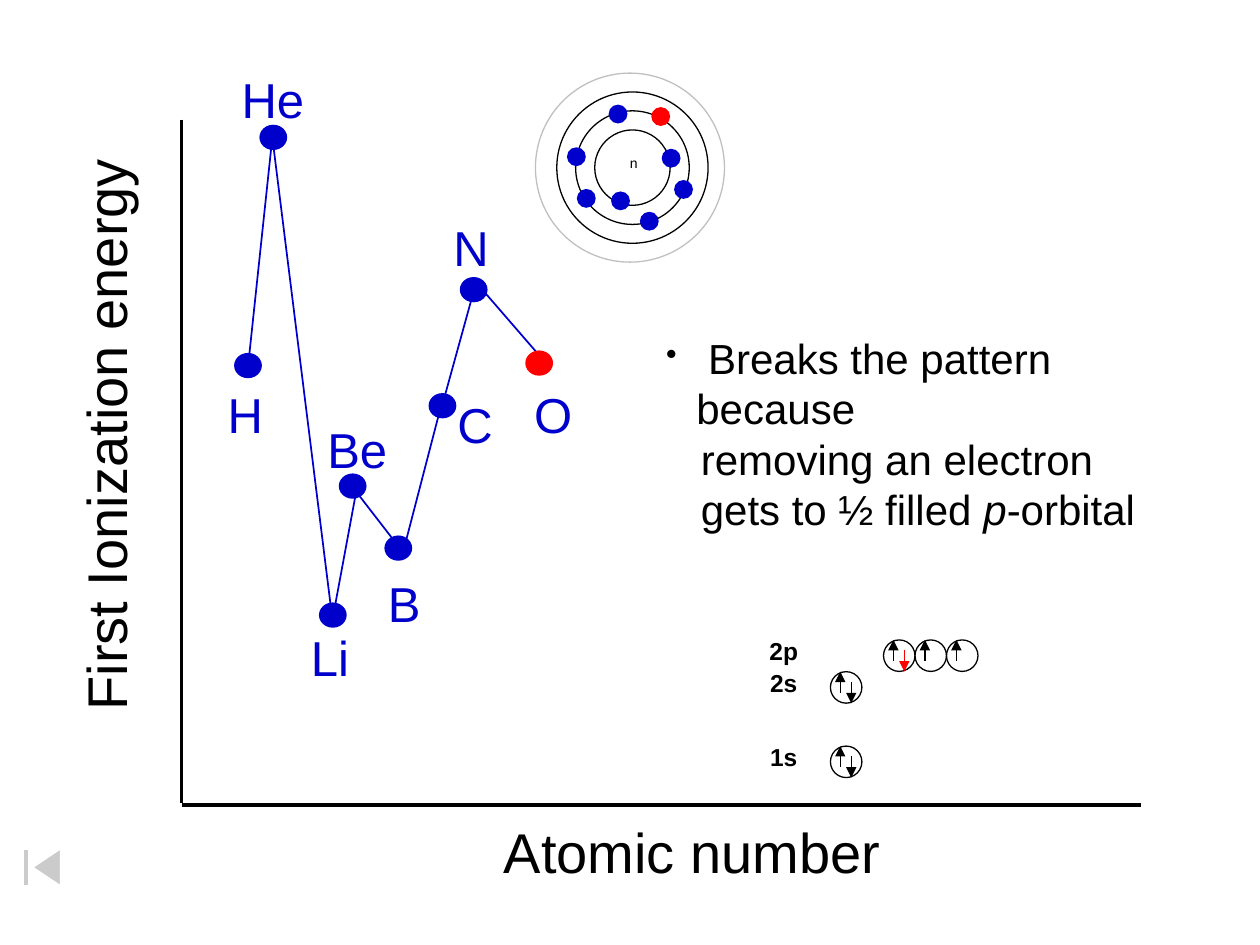
from lxml import etree
from pptx import Presentation
from pptx.dml.color import RGBColor
from pptx.enum import shapes, text
from pptx.oxml.ns import qn
from pptx.util import Cm, Pt

COLOURS = {"black": "000000", "blue": "0000CC", "red": "FF0000",
           "grey": "C0C0C0", "white": "FFFFFF"}

# All lengths are in centimetres.
AXES = [((3.66, 2.41), (3.66, 16.18)), ((23.01, 16.23), (3.66, 16.23))]
AXIS_TITLES = [("First Ionization energy", (-3.73, 7.92, 11.71, 1.6), 270),
               ("Atomic number", (9.91, 16.36, 8.2, 1.6), 0)]

# symbol, dot centre, label left, label top, label width, colour of dot
ELEMENTS = [
    ("H", (5.0, 7.37), (4.34, 7.62, 0.97), "blue"),
    ("He", (5.51, 2.77), (4.62, 1.27, 1.85), "blue"),
    ("Li", (6.71, 12.4), (6.02, 12.52, 1.85), "blue"),
    ("Be", (7.11, 9.8), (6.35, 8.33, 2.39), "blue"),
    ("B", (8.03, 11.05), (7.57, 11.43, 2.39), "blue"),
    ("C", (8.92, 8.18), (8.97, 7.82, 1.55), "blue"),
    ("N", (9.55, 5.84), (8.89, 4.27, 1.55), "blue"),
    ("O", (10.87, 7.32), (10.52, 7.62, 1.55), "red"),
]
TREND_LINES = [
    ((5.0, 7.39), (5.49, 2.77)), ((5.49, 2.77), (6.68, 12.32)),
    ((6.73, 12.34), (7.19, 9.86)), ((7.14, 9.86), (7.92, 10.87)),
    ((8.18, 10.92), (8.84, 8.38)), ((8.89, 8.26), (9.53, 5.94)),
    ((9.75, 5.87), (10.85, 7.14)),
]
SHELLS = [((12.75, 3.38), 1.52, "black"), ((12.75, 3.38), 2.29, "black"),
          ((12.75, 3.38), 3.05, "black"), ((12.7, 3.38), 3.81, "grey")]
ELECTRONS = [
    ((12.51, 4.05), "blue"), ((13.53, 3.19), "blue"), ((11.82, 4.0), "blue"),
    ((12.46, 2.3), "blue"), ((13.09, 4.46), "blue"), ((11.62, 3.16), "blue"),
    ((13.32, 2.35), "red"), ((13.78, 3.82), "blue"),
]
# name, left, top, colour of the second electron in each orbital (None = empty)
SUBSHELLS = [("1s", 16.74, 15.04, ["black"]), ("2s", 16.74, 13.54, ["black"]),
             ("2p", 17.81, 12.9, ["red", None, None])]
ORBITAL = 0.635
EXPLANATION = [
    [(" Breaks the pattern because", False)],
    [("removing an electron", False)],
    [("gets to ½ filled ", False), ("p", True), ("-orbital", False)],
]


def rgb(name):
    return RGBColor.from_string(COLOURS[name])


def add_shape(parent, kind, box, fill=None, line=None, alpha=None):
    shape = parent.add_shape(kind, *map(Cm, box))
    shape.shadow.inherit = False
    if fill:
        shape.fill.solid()
        shape.fill.fore_color.rgb = rgb(fill)
        if alpha:
            colour = shape._element.spPr.find(".//" + qn("a:srgbClr"))
            etree.SubElement(colour, qn("a:alpha"), val=str(alpha * 1000))
    else:
        shape.fill.background()
    if line:
        shape.line.color.rgb = rgb(line)
        shape.line.width = Pt(0.75)
    else:
        shape.line.fill.background()
    return shape


def add_oval(parent, centre, width, height, **style):
    x, y = centre
    box = (x - width / 2, y - height / 2, width, height)
    return add_shape(parent, shapes.MSO_SHAPE.OVAL, box, **style)


def add_line(parent, start, end, colour, width, arrow=False):
    line = parent.add_connector(shapes.MSO_CONNECTOR.STRAIGHT,
                                *map(Cm, start + end))
    line.line.color.rgb = rgb(colour)
    line.line.width = Pt(width)
    if arrow:
        etree.SubElement(line.line._get_or_add_ln(), qn("a:tailEnd"), type="triangle")
    etree.SubElement(line._element.spPr, qn("a:effectLst"))


def style_font(paragraph, size, colour="black", bold=False):
    font = paragraph.font
    font.name, font.size, font.bold = "Arial", Pt(size), bold
    font.color.rgb = rgb(colour)


def add_text(parent, words, box, size, colour="black", wrap=True, bold=False):
    text_box = parent.add_textbox(*map(Cm, box))
    text_box.text_frame.word_wrap = wrap
    paragraph = text_box.text_frame.paragraphs[0]
    paragraph.text = words
    style_font(paragraph, size, colour, bold)
    return text_box


def add_graph(parent):
    for start, end in AXES:
        add_line(parent, start, end, "black", 2)
    for words, box, rotation in AXIS_TITLES:
        add_text(parent, words, box, 32).rotation = rotation
    for start, end in TREND_LINES:
        add_line(parent, start, end, "blue", 1)
    for symbol, centre, (left, top, width), colour in ELEMENTS:
        add_oval(parent, centre, 0.56, 0.51, fill=colour)
        add_text(parent, symbol, (left, top, width, 1.45), 28, "blue")


def add_atom(parent):
    for centre, diameter, colour in SHELLS:
        add_oval(parent, centre, diameter, diameter, line=colour)
    for centre, colour in ELECTRONS:
        add_oval(parent, centre, 0.38, 0.38, fill=colour)
    add_text(parent, "n", (12.45, 3.0, 0.69, 0.58), 8, wrap=False)


def add_orbital_diagram(parent):
    group = parent.add_group_shape().shapes
    for name, left, top, second_electrons in SUBSHELLS:
        label = add_text(group, name, (15.26, top - 0.2, 1.08, 0.84), 14,
                         wrap=False, bold=True)
        label.text_frame.paragraphs[0].alignment = text.PP_ALIGN.CENTER
        for index, second in enumerate(second_electrons):
            x = left + index * ORBITAL
            add_shape(group, shapes.MSO_SHAPE.OVAL, (x, top, ORBITAL, ORBITAL),
                      fill="white", line="black", alpha=50)
            add_line(group, (x + 0.2, top + 0.42), (x + 0.2, top),
                     "black", 0.75, arrow=True)
            if second:
                add_line(group, (x + 0.42, top + 0.21), (x + 0.42, top + ORBITAL),
                         second, 0.75, arrow=True)


def add_explanation(parent):
    frame = parent.add_textbox(Cm(13.18), Cm(6.58), Cm(11.5), Cm(3.3)).text_frame
    frame.word_wrap = True
    for index, runs in enumerate(EXPLANATION):
        paragraph = frame.add_paragraph() if index else frame.paragraphs[0]
        style_font(paragraph, 24)
        for words, italic in runs:
            run = paragraph.add_run()
            run.text = words
            run.font.italic = italic
        properties = paragraph._p.get_or_add_pPr()
        properties.set("marL", str(Cm(0.7 if index else 0.61)))
        if index == 0:
            properties.set("indent", str(-Cm(0.61)))
            bullet_size = etree.Element(qn("a:buSzPct"), val="75000")
            bullet = etree.Element(qn("a:buChar"), char="•")
            properties.insert(0, bullet_size)
            properties.insert(1, bullet)


def main():
    presentation = Presentation()
    presentation.slide_width, presentation.slide_height = Cm(25.4), Cm(19.05)
    slide = presentation.slides.add_slide(presentation.slide_layouts[6])
    add_graph(slide.shapes)
    add_shape(slide.shapes, shapes.MSO_SHAPE.ACTION_BUTTON_BEGINNING,
              (0, 16.99, 1.7, 0.99), fill="white", line="white", alpha=50)
    add_atom(slide.shapes)
    add_orbital_diagram(slide.shapes)
    add_explanation(slide.shapes)
    presentation.save("out.pptx")


if __name__ == "__main__":
    main()
